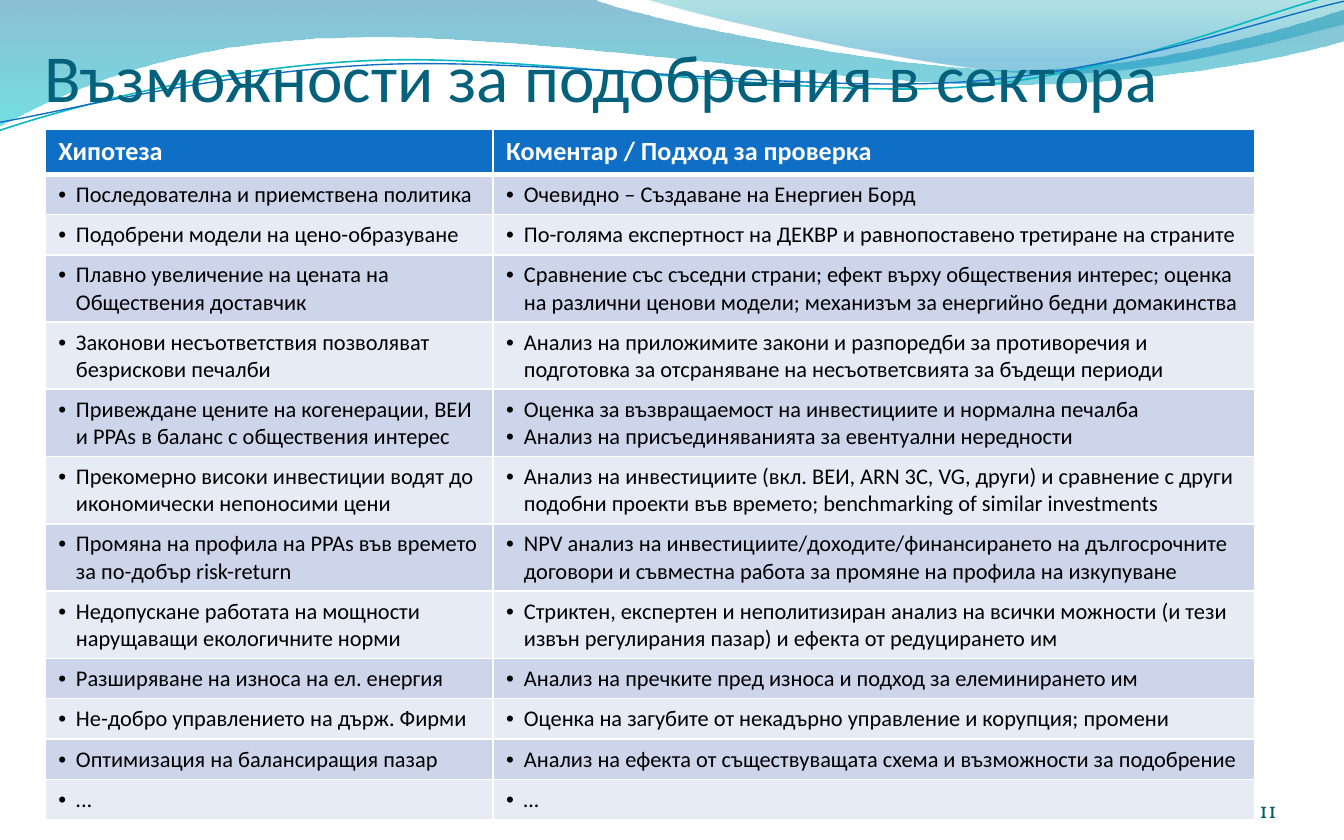
from lxml import etree
from pptx import Presentation
from pptx import util as u
from pptx.dml.color import RGBColor
from pptx.enum import text
from pptx.oxml.ns import qn

TITLE = "Възможности за подобрения в сектора"
HEADINGS = ("Хипотеза", "Коментар / Подход за проверка")
HYPOTHESES = [
    ("Последователна и приемствена политика",
     "Очевидно – Създаване на Енергиен Борд"),
    ("Подобрени модели на цено-образуване",
     "По-голяма експертност на ДЕКВР и равнопоставено третиране на страните"),
    ("Плавно увеличение на цената на Обществения доставчик",
     "Сравнение със съседни страни; ефект върху обществения интерес; оценка "
     "на различни ценови модели; механизъм за енергийно бедни домакинства"),
    ("Законови несъответствия позволяват безрискови печалби",
     "Анализ на приложимите закони и разпоредби за противоречия и "
     "подготовка за отсраняване на несъответсвията за бъдещи периоди"),
    ("Привеждане цените на когенерации, ВЕИ и PPAs в баланс с обществения интерес",
     "Оценка за възвращаемост на инвестициите и нормална печалба\n"
     "Анализ на присъединяванията за евентуални нередности"),
    ("Прекомерно високи инвестиции водят до икономически непоносими цени",
     "Анализ на инвестициите (вкл. ВЕИ, ARN 3C, VG, други) и сравнение с други "
     "подобни проекти във времето; benchmarking of similar investments"),
    ("Промяна на профила на PPAs във времето за по-добър risk-return",
     "NPV анализ на инвестициите/доходите/финансирането на дългосрочните "
     "договори и съвместна работа за промяне на профила на изкупуване"),
    ("Недопускане работата на мощности нарущаващи екологичните норми",
     "Стриктен, експертен и неполитизиран анализ на всички можности (и тези "
     "извън регулирания пазар) и ефекта от редуцирането им"),
    ("Разширяване на износа на ел. енергия",
     "Анализ на пречките пред износа и подход за елеминирането им"),
    ("Не-добро управлението на държ. Фирми",
     "Оценка на загубите от некадърно управление и корупция; промени"),
    ("Оптимизация на балансиращия пазар",
     "Анализ на ефекта от съществуващата схема и възможности за подобрение"),
    ("...", "…"),
]

WIDE_WAVE = [
    (0, 0), (316.8, -0.7),
    (342.7, 10.1, 478.1, 37.4, 545.8, 37.4), (614.2, 37.4, 689.8, 15.1, 720, 5),
    (720.7, 21.6),
    (707.8, 26.6, 626.4, 45.4, 537.1, 45.4), (447.8, 45.4, 275, 16.6, 185, 20.2),
    (92.9, 21.6, 33.1, 49.7, -0.7, 67.7),
]
RIGHT_WAVE = [
    (344.9, -0.7), (366.5, 6.5, 491, 36.7, 553.7, 38.9),
    (616.3, 41.8, 691.9, 19.4, 720, 13), (720, 0),
]
TEAL_STRAND = [
    (0, 69.8), (34.6, 58.3, 113.8, 36, 199.4, 32.4),
    (284.4, 28.8, 426.2, 52.6, 513.4, 46.8), (599.8, 40.3, 676.1, 6.5, 718.6, -3.6),
]
BLUE_STRAND = [
    (0, 65.5), (33.8, 59.8, 118.1, 38.2, 203.8, 34.6),
    (290.2, 31, 429.8, 49.7, 516.2, 43.9), (601.9, 38.2, 677.5, 10.1, 720, 0.7),
]


def color(hex_code):
    return RGBColor.from_string(hex_code)


def add_outline(slide, segments, close):
    corners = [(u.Pt(segment[-2]), u.Pt(segment[-1])) for segment in segments]
    builder = slide.shapes.build_freeform(*corners[0])
    builder.add_line_segments(corners[1:], close=close)
    outline = builder.convert_to_shape()
    outline.shadow.inherit = False
    route = next(outline._element.iter(qn("a:path")))
    for line, segment in zip(route.findall(qn("a:lnTo")), segments[1:]):
        if len(segment) == 6:
            curve = etree.Element(qn("a:cubicBezTo"))
            for x, y in zip(segment[::2], segment[1::2]):
                point = etree.SubElement(curve, qn("a:pt"))
                point.set("x", str(u.Pt(x) - outline.left))
                point.set("y", str(u.Pt(y) - outline.top))
            route.replace(line, curve)
    return outline


def add_wave(slide, segments, stops):
    wave = add_outline(slide, segments, True)
    wave.line.fill.background()
    wave.fill.gradient()
    wave.fill.gradient_angle = 270
    for stop, (position, hex_code, _) in zip(wave.fill.gradient_stops, stops):
        stop.position = position
        stop.color.rgb = color(hex_code)
    gradient = wave._element.spPr.find(qn("a:gradFill"))
    for shade, (_, _, opacity) in zip(gradient.iter(qn("a:srgbClr")), stops):
        etree.SubElement(shade, qn("a:alpha")).set("val", str(opacity * 1000))


def add_strand(slide, segments, hex_code, width):
    strand = add_outline(slide, segments, False)
    strand.fill.background()
    strand.line.color.rgb = color(hex_code)
    strand.line.width = u.Pt(width)


def style_runs(paragraph, size, hex_code, font="Calibri", bold=False, italic=False):
    for run in paragraph.runs:
        run.font.name = font
        run.font.size = u.Pt(size)
        run.font.bold = bold
        run.font.italic = italic
        run.font.color.rgb = color(hex_code)


def add_label(slide, box, wording, size, hex_code, font, align):
    frame = slide.shapes.add_textbox(*map(u.Pt, box)).text_frame
    frame.word_wrap = True
    frame.margin_left = frame.margin_right = frame.margin_top = frame.margin_bottom = 0
    frame.vertical_anchor = text.MSO_ANCHOR.BOTTOM
    frame.text = wording
    frame.paragraphs[0].alignment = align
    style_runs(frame.paragraphs[0], size, hex_code, font)


def add_bullet(paragraph):
    properties = paragraph._p.get_or_add_pPr()
    properties.set("marL", str(u.Pt(9.5)))
    properties.set("indent", str(-u.Pt(9.5)))
    etree.SubElement(properties, qn("a:buFont")).set("typeface", "Arial")
    etree.SubElement(properties, qn("a:buChar")).set("char", "•")


def fill_cell(cell, wording, hex_code, top=1, bottom=1):
    cell.fill.solid()
    cell.fill.fore_color.rgb = color(hex_code)
    cell.text_frame.text = wording
    borders = {"a:lnL": 1, "a:lnR": 1, "a:lnT": top, "a:lnB": bottom}
    for place, (side, width) in enumerate(borders.items()):
        border = etree.Element(qn(side))
        border.set("w", str(u.Pt(width)))
        paint = etree.SubElement(border, qn("a:solidFill"))
        etree.SubElement(paint, qn("a:srgbClr")).set("val", "FFFFFF")
        cell._tc.tcPr.insert(place, border)


def add_hypotheses(slide):
    frame = slide.shapes.add_table(len(HYPOTHESES) + 1, 2, u.Pt(24), u.Pt(69.2),
                                   u.Pt(648), u.Pt(369.4))
    table = frame.table
    for column, width in zip(table.columns, (240, 408)):
        column.width = u.Pt(width)
    for number, row in enumerate(table.rows):
        row.height = u.Pt(13.7 if 1 <= number <= 8 else 0)
    frame.height = u.Pt(369.4)
    for cell, heading in zip(table.rows[0].cells, HEADINGS):
        fill_cell(cell, heading, "0F6FC6", bottom=3)
        style_runs(cell.text_frame.paragraphs[0], 14, "FFFFFF", bold=True)
    for number, wordings in enumerate(HYPOTHESES, 1):
        for cell, wording in zip(table.rows[number].cells, wordings):
            fill_cell(cell, wording, "CCD5EA" if number % 2 else "E7EBF5",
                      top=3 if number == 1 else 1)
            for paragraph in cell.text_frame.paragraphs:
                add_bullet(paragraph)
                style_runs(paragraph, 12, "000000", italic=number == len(HYPOTHESES))


def main():
    deck = Presentation()
    deck.slide_width, deck.slide_height = u.Pt(720), u.Pt(450)
    slide = deck.slides.add_slide(deck.slide_layouts[6])
    add_wave(slide, WIDE_WAVE, [(0, "0074A1", 45), (1, "00C6CF", 55)])
    add_wave(slide, RIGHT_WAVE, [(0, "00A1A9", 30), (0.8, "008BBF", 45)])
    add_strand(slide, TEAL_STRAND, "0AB8BF", 0.85)
    add_strand(slide, BLUE_STRAND, "0F6FC6", 0.75)
    add_label(slide, (24, 18.4, 648, 44), TITLE, 36, "04617B", "Calibri",
              text.PP_ALIGN.LEFT)
    add_hypotheses(slide)
    add_label(slide, (624, 417, 60, 24), "11", 12, "045D75", "Vollkorn",
              text.PP_ALIGN.RIGHT)
    deck.save("out.pptx")


if __name__ == "__main__":
    main()
